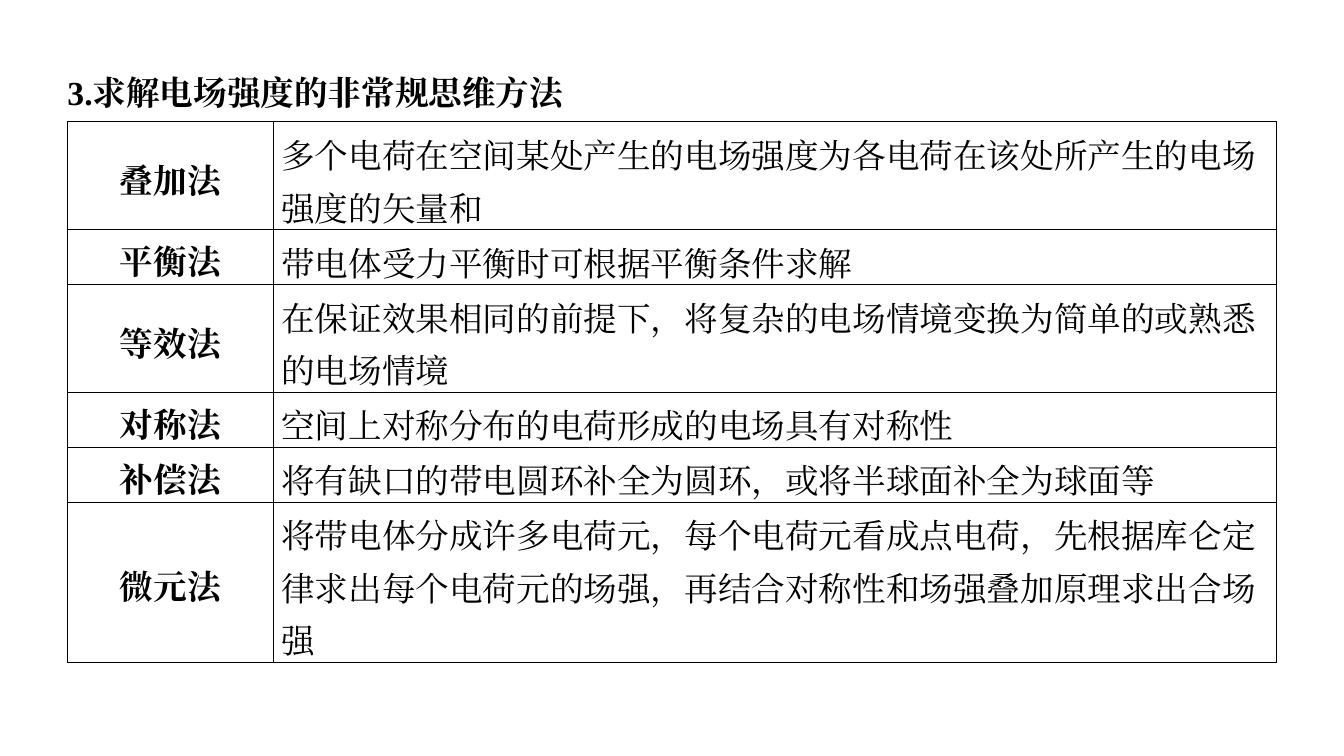
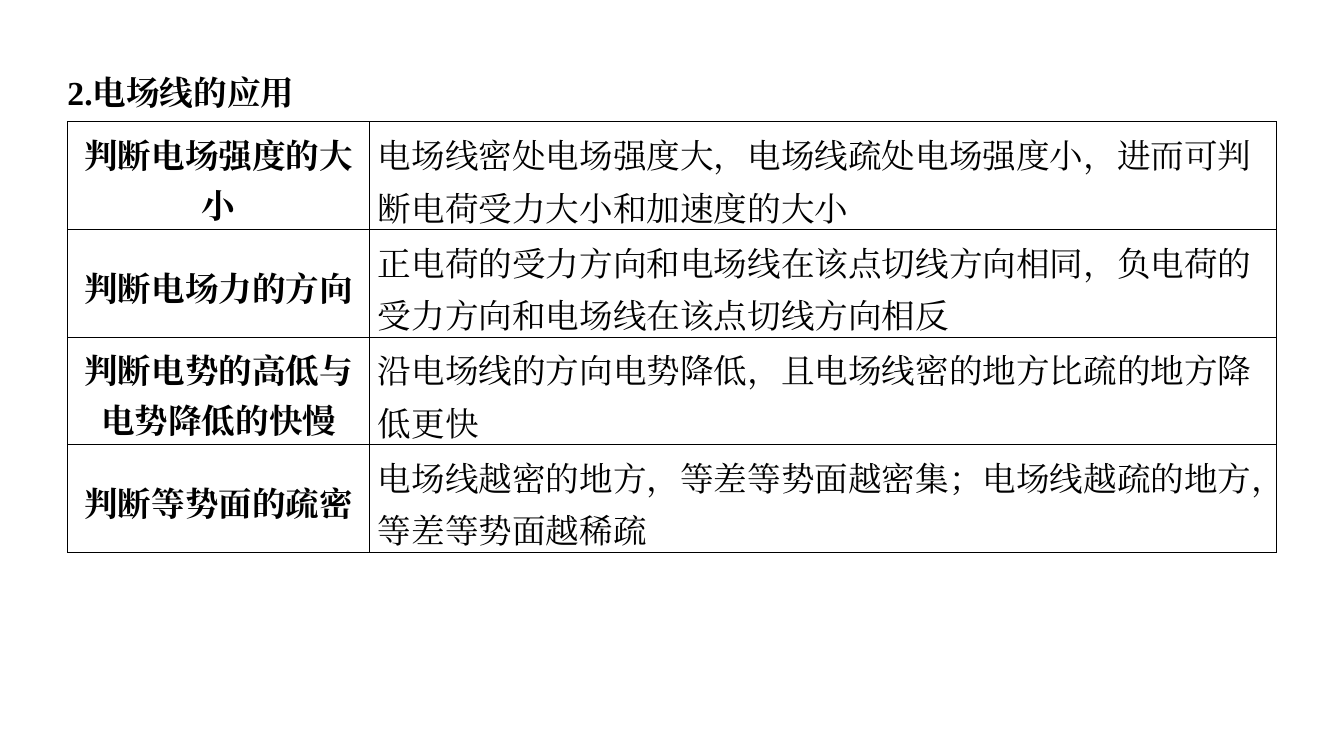
from lxml import etree
from pptx import Presentation
from pptx.dml.color import RGBColor
from pptx.enum.lang import MSO_LANGUAGE_ID
from pptx.enum.text import MSO_ANCHOR, MSO_AUTO_SIZE, PP_ALIGN
from pptx.oxml.ns import qn
from pptx.util import Pt

LEFT, CENTER = PP_ALIGN.LEFT, PP_ALIGN.CENTER
TOP, MIDDLE = MSO_ANCHOR.TOP, MSO_ANCHOR.MIDDLE
NO_AUTOFIT = MSO_AUTO_SIZE.NONE
CHINESE = MSO_LANGUAGE_ID.SIMPLIFIED_CHINESE

INK = "000000"
FACE = "Times New Roman"
TITLE_ONLY = 5
TITLE_BOX = (48.2, 38, 863.5, 37.5)
TABLE_BOX = (48.2, 87.1, 863.5)
TITLE_LEADING, METHOD_LEADING, DETAIL_LEADING = 42, 36, 37.5
ROW_PADDING = 1.8
CELL_MARGIN = 5.75
BORDER_WIDTH = 0.75

SLIDES = [
    ("3.求解电场强度的非常规思维方法", 147, [
        ("叠加法", "多个电荷在空间某处产生的电场强度为各电荷在该处所产生的电场强度的矢量和", 2),
        ("平衡法", "带电体受力平衡时可根据平衡条件求解", 1),
        ("等效法", "在保证效果相同的前提下，将复杂的电场情境变换为简单的或熟悉的电场情境", 2),
        ("对称法", "空间上对称分布的电荷形成的电场具有对称性", 1),
        ("补偿法", "将有缺口的带电圆环补全为圆环，或将半球面补全为球面等", 1),
        ("微元法", "将带电体分成许多电荷元，每个电荷元看成点电荷，先根据库仑定律求出每个电荷元的场强，"
                "再结合对称性和场强叠加原理求出合场强", 3),
    ]),
    ("2.电场线的应用", 216, [
        ("判断电场强度的大小", "电场线密处电场强度大，电场线疏处电场强度小，进而可判断电荷受力大小和加速度的大小", 2),
        ("判断电场力的方向", "正电荷的受力方向和电场线在该点切线方向相同，负电荷的受力方向和电场线在该点切线方向相反", 2),
        ("判断电势的高低与电势降低的快慢", "沿电场线的方向电势降低，且电场线密的地方比疏的地方降低更快", 2),
        ("判断等势面的疏密", "电场线越密的地方，等差等势面越密集；电场线越疏的地方，等差等势面越稀疏", 2),
    ]),
]


def color(value):
    return RGBColor.from_string(value)


def apply(target, values):
    for name, value in values.items():
        setattr(target, name, value)


def write(frame, text, bold, align, leading):
    paragraph = frame.paragraphs[0]
    apply(paragraph, {"alignment": align, "line_spacing": Pt(leading)})
    run = paragraph.add_run()
    run.text = text
    apply(run.font, {"name": FACE, "size": Pt(24), "bold": bold, "language_id": CHINESE})
    run.font.color.rgb = color(INK)
    latin = run._r.find(qn("a:rPr")).find(qn("a:latin"))
    east_asian = etree.Element(qn("a:ea"), typeface=FACE)
    latin.addnext(east_asian)


def add_border(cell):
    properties = cell._tc.get_or_add_tcPr()
    for side in ("lnL", "lnR", "lnT", "lnB"):
        line = etree.SubElement(properties, qn(f"a:{side}"), w=str(int(Pt(BORDER_WIDTH))))
        fill = etree.SubElement(line, qn("a:solidFill"))
        etree.SubElement(fill, qn("a:srgbClr"), val=INK)


def fill_cell(cell, text, bold, align, leading):
    apply(cell, {"margin_left": Pt(CELL_MARGIN), "margin_right": Pt(CELL_MARGIN),
                 "margin_top": 0, "margin_bottom": 0, "vertical_anchor": MIDDLE})
    write(cell.text_frame, text, bold, align, leading)
    add_border(cell)
    cell.fill.background()


def place_title(slide, box, text):
    title = slide.shapes.title
    apply(title, dict(zip(("left", "top", "width", "height"), map(Pt, box))))
    frame = title.text_frame
    apply(frame, {"margin_left": 0, "margin_right": 0, "margin_top": 0, "margin_bottom": 0,
                  "vertical_anchor": TOP, "auto_size": NO_AUTOFIT, "word_wrap": True})
    write(frame, text, True, LEFT, TITLE_LEADING)


def place_table(slide, box, method_width, entries):
    left, top, width = box
    heights = [DETAIL_LEADING * lines + ROW_PADDING for _, _, lines in entries]
    table = slide.shapes.add_table(len(entries), 2, Pt(left), Pt(top),
                                   Pt(width), Pt(sum(heights))).table
    apply(table, {"first_row": False, "horz_banding": False})
    for column, column_width in zip(table.columns, (method_width, width - method_width)):
        column.width = Pt(column_width)
    for row, height, (method, detail, _) in zip(table.rows, heights, entries):
        row.height = Pt(height)
        fill_cell(row.cells[0], method, True, CENTER, METHOD_LEADING)
        fill_cell(row.cells[1], detail, False, LEFT, DETAIL_LEADING)


def main():
    deck = Presentation()
    apply(deck, {"slide_width": Pt(960), "slide_height": Pt(540)})
    for title, method_width, entries in SLIDES:
        slide = deck.slides.add_slide(deck.slide_layouts[TITLE_ONLY])
        place_title(slide, TITLE_BOX, title)
        place_table(slide, TABLE_BOX, method_width, entries)
    deck.save("out.pptx")


if __name__ == "__main__":
    main()
